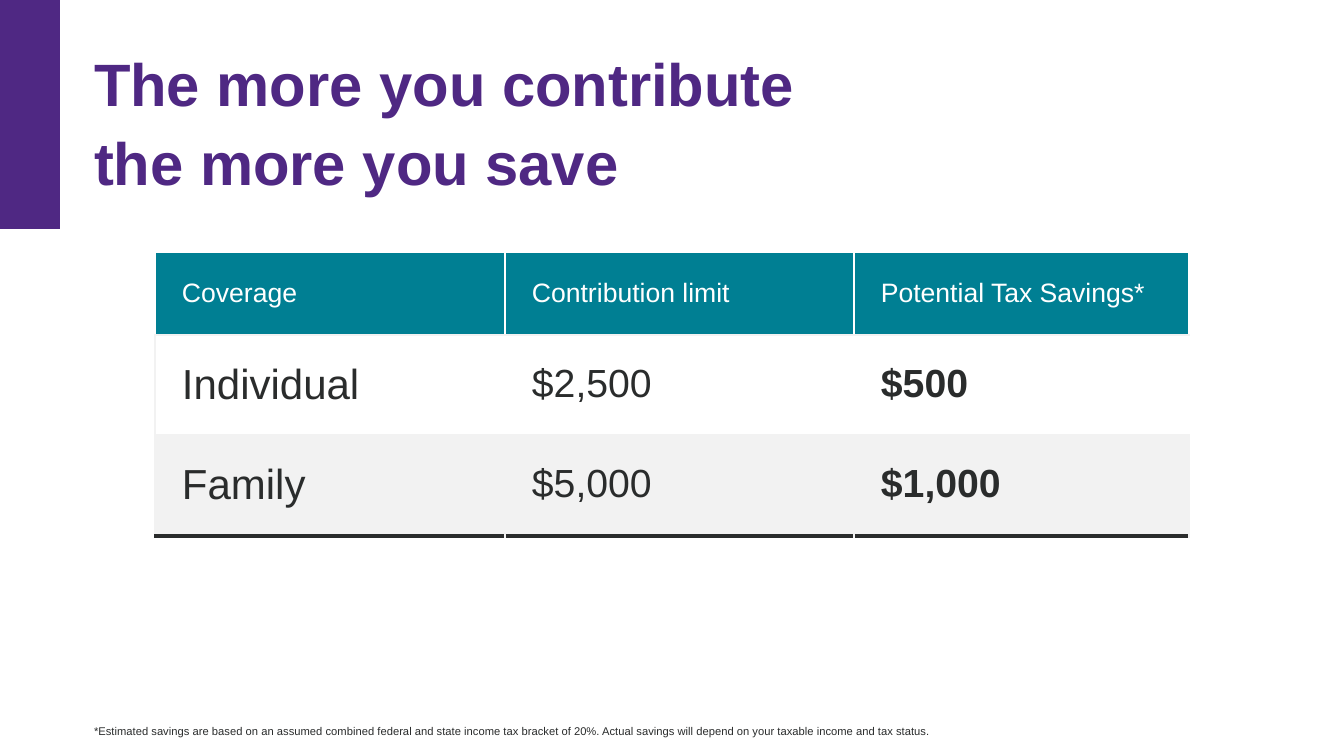
import pptx
import pptx.dml.color
import pptx.enum.shapes
import pptx.enum.text
import pptx.oxml
import pptx.oxml.ns
import pptx.util

PX = 12192000 / 1344
PURPLE, TEAL, INK, GREY, WHITE = "4F2883", "007F93", "2A2C2C", "F2F2F2", "FFFFFF"


def px(*lengths):
    return [pptx.util.Emu(round(length * PX)) for length in lengths]


def style(paragraph, size, colour, bold=False):
    font = paragraph.runs[0].font
    font.name = "Arial"
    font.size = pptx.util.Pt(size)
    font.bold = bold
    font.color.rgb = pptx.dml.color.RGBColor.from_string(colour)


presentation = pptx.Presentation()
presentation.slide_width, presentation.slide_height = px(1344, 756)
slide = presentation.slides.add_slide(presentation.slide_layouts[1])

# Accent bar
bar = slide.shapes.add_shape(pptx.enum.shapes.MSO_SHAPE.RECTANGLE, *px(0, 0, 60, 229))
bar.shadow.inherit = False
bar.fill.solid()
bar.fill.fore_color.rgb = pptx.dml.color.RGBColor.from_string(PURPLE)
bar.line.fill.background()

# Title and footnote
footnote = ("*Estimated savings are based on an assumed combined federal and state income tax "
            "bracket of 20%. Actual savings will depend on your taxable income and tax status.")
texts = [
    (slide.shapes.title, (94, 40, 763, 153), "The more you contribute the more you save",
     42.7, PURPLE, True, 1.1, 0),
    (slide.placeholders[1], (94, 720, 1184, 16), footnote, 8, INK, False, 1.3, 8),
]
for shape, box, text, size, colour, bold, line_spacing, space_after in texts:
    shape.left, shape.top, shape.width, shape.height = px(*box)
    frame = shape.text_frame
    frame.text = text
    frame.word_wrap = True
    frame.auto_size = pptx.enum.text.MSO_AUTO_SIZE.NONE
    frame.vertical_anchor = pptx.enum.text.MSO_ANCHOR.TOP
    frame.margin_left = frame.margin_top = frame.margin_right = frame.margin_bottom = 0
    paragraph = frame.paragraphs[0]
    properties = paragraph._p.get_or_add_pPr()
    properties.set("marL", "0")
    properties.set("indent", "0")
    pptx.oxml.ns.qn("a:buNone")
    properties.append(pptx.oxml.parse_xml(f'<a:buNone {pptx.oxml.ns.nsdecls("a")}/>'))
    paragraph.alignment = pptx.enum.text.PP_ALIGN.LEFT
    paragraph.line_spacing = line_spacing
    paragraph.space_before = pptx.util.Pt(0)
    paragraph.space_after = pptx.util.Pt(space_after)
    style(paragraph, size, colour, bold)

# Savings table
rows = [
    ("Coverage", "Contribution limit", "Potential Tax Savings*"),
    ("Individual", "$2,500", "$500"),
    ("Family", "$5,000", "$1,000"),
]
column_widths = px(350, 349, 335)
row_heights = px(83, 100, 101)
fills = [TEAL, WHITE, GREY]
# Border colours per row: left, right, top, bottom
borders = [(WHITE, WHITE, WHITE, GREY), (WHITE, WHITE, GREY, GREY), (GREY, GREY, GREY, INK)]

table = slide.shapes.add_table(3, 3, *px(155, 252, 1034, 284)).table
for column, width in zip(table.columns, column_widths):
    column.width = width
for r, texts_in_row in enumerate(rows):
    table.rows[r].height = row_heights[r]
    for c, text in enumerate(texts_in_row):
        cell = table.cell(r, c)
        cell.text = text
        cell.margin_left, cell.margin_right = px(27, 27)
        cell.margin_top, cell.margin_bottom = px(20 if r == 0 else 27, 20)
        if r == 0:
            cell.vertical_anchor = pptx.enum.text.MSO_ANCHOR.MIDDLE
            style(cell.text_frame.paragraphs[0], 19, WHITE)
        else:
            style(cell.text_frame.paragraphs[0], 30 if c == 0 else 28, INK, c == 2)
        cell.fill.solid()
        cell.fill.fore_color.rgb = pptx.dml.color.RGBColor.from_string(fills[r])
        for position, (side, colour) in enumerate(zip("LRTB", borders[r])):
            if (r, c, side) == (1, 0, "L"):
                colour = GREY
            width = pptx.util.Pt(3 if colour == INK else 1)
            cell._tc.get_or_add_tcPr().insert(position, pptx.oxml.parse_xml(
                f'<a:ln{side} {pptx.oxml.ns.nsdecls("a")} w="{width}"><a:solidFill>'
                f'<a:srgbClr val="{colour}"/></a:solidFill></a:ln{side}>'))

presentation.save("out.pptx")
